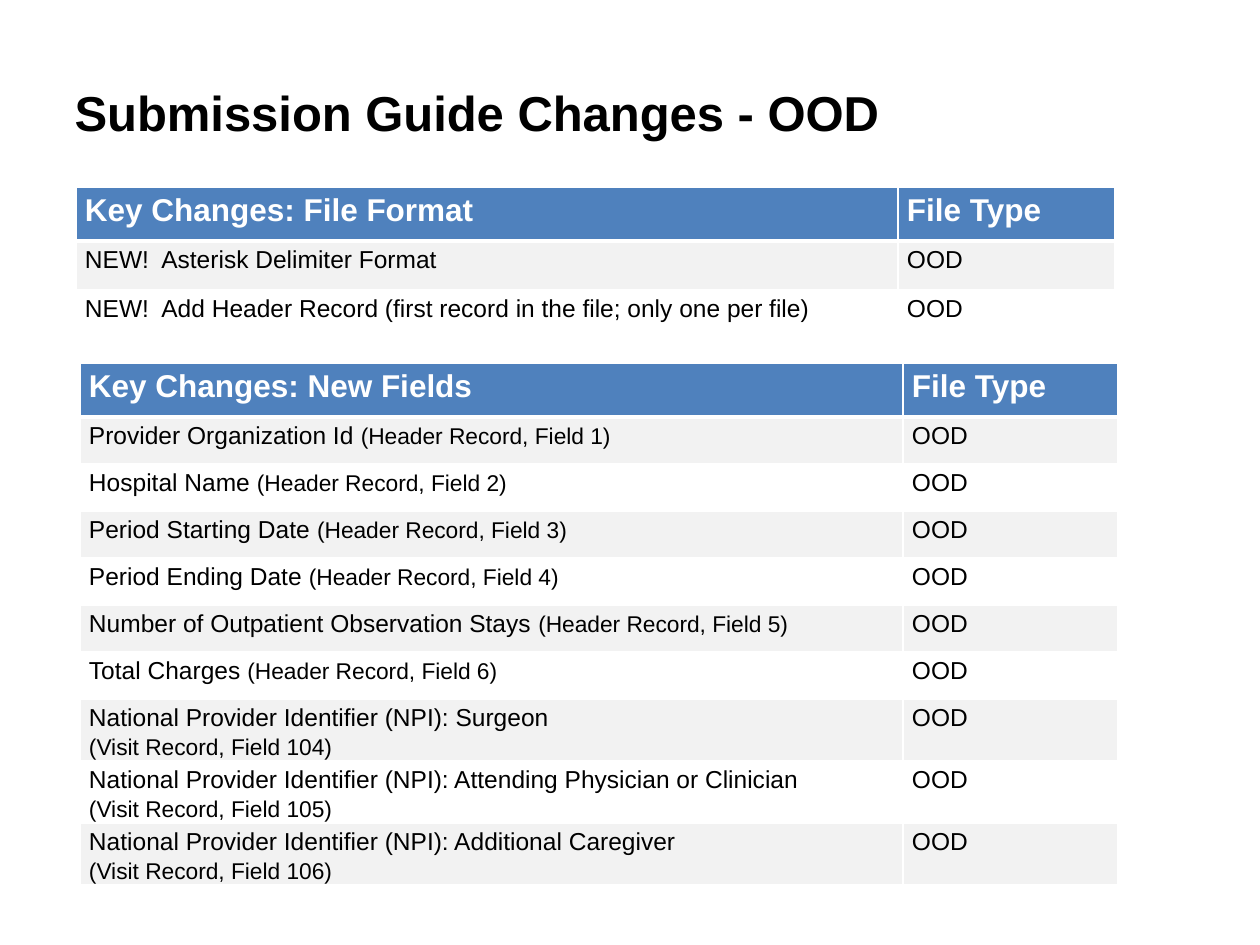
from lxml.etree import SubElement
from pptx import Presentation
from pptx.dml.color import RGBColor
from pptx.enum.text import MSO_ANCHOR, PP_ALIGN
from pptx.oxml.ns import qn
from pptx.util import Pt

EMU_PER_PX = 914400 / 126
FONT = "Arial"
BLACK, WHITE, BLUE, GRAY = "000000", "FFFFFF", "4F81BD", "F2F2F2"

TITLE = "Submission Guide Changes - OOD"
FILE_TYPE = "OOD"
HEADER_HEIGHT = 54
TWO_LINE_HEIGHT = 62

# Each change is (name, location); a name ending in a newline puts the location below it.
TABLES = [
    dict(heading="Key Changes: File Format", left=76, top=187,
         columns=(822, 217), row_height=49, changes=[
             ("NEW!  Asterisk Delimiter Format", ""),
             ("NEW!  Add Header Record (first record in the file; only one per file)", ""),
         ]),
    dict(heading="Key Changes: New Fields", left=80, top=363,
         columns=(823, 215), row_height=47, changes=[
             ("Provider Organization Id ", "(Header Record, Field 1)"),
             ("Hospital Name ", "(Header Record, Field 2)"),
             ("Period Starting Date ", "(Header Record, Field 3)"),
             ("Period Ending Date ", "(Header Record, Field 4)"),
             ("Number of Outpatient Observation Stays ", "(Header Record, Field 5)"),
             ("Total Charges ", "(Header Record, Field 6)"),
             ("National Provider Identifier (NPI): Surgeon\n", "(Visit Record, Field 104)"),
             ("National Provider Identifier (NPI): Attending Physician or Clinician\n",
              "(Visit Record, Field 105)"),
             ("National Provider Identifier (NPI): Additional Caregiver\n",
              "(Visit Record, Field 106)"),
         ]),
]


def px(length):
    return round(length * EMU_PER_PX)


def color(hex_string):
    return RGBColor.from_string(hex_string)


def set_font(font, size, hex_string, bold=False):
    font.name, font.size, font.bold = FONT, Pt(size), bold
    font.color.rgb = color(hex_string)


def add_borders(cell, bottom_width):
    properties = cell._tc.get_or_add_tcPr()
    for side, width in (("L", 1), ("R", 1), ("T", 1), ("B", bottom_width)):
        line = SubElement(properties, qn(f"a:ln{side}"), w=str(Pt(width)))
        fill = SubElement(line, qn("a:solidFill"))
        SubElement(fill, qn("a:srgbClr"), val=WHITE)


def fill_cell(cell, name, location="", size=14, text_color=BLACK,
              background=WHITE, bold=False, bottom_width=1):
    add_borders(cell, bottom_width)
    cell.fill.solid()
    cell.fill.fore_color.rgb = color(background)
    cell.margin_left = cell.margin_right = px(9)
    cell.margin_top, cell.margin_bottom = px(1), 0
    paragraph = cell.text_frame.paragraphs[0]
    paragraph.line_spacing = 1.15
    paragraph.space_after = Pt(10)
    set_font(paragraph.font, size, text_color, bold)
    set_font(paragraph.add_run().font, size, text_color, bold)
    paragraph.runs[0].text = name.rstrip("\n")
    if name.endswith("\n"):
        paragraph.add_line_break()
    if location:
        detail = paragraph.add_run()
        detail.text = location
        set_font(detail.font, 13, text_color)


def add_changes_table(slide, heading, left, top, columns, row_height, changes):
    heights = [HEADER_HEIGHT] + [
        TWO_LINE_HEIGHT if name.endswith("\n") else row_height for name, _ in changes]
    table = slide.shapes.add_table(
        len(heights), len(columns), px(left), px(top),
        px(sum(columns)), px(sum(heights))).table
    for column, width in zip(table.columns, columns):
        column.width = px(width)
    for row, height in zip(table.rows, heights):
        row.height = px(height)
    for index, label in enumerate((heading, "File Type")):
        fill_cell(table.cell(0, index), label, size=18, text_color=WHITE,
                  background=BLUE, bold=True, bottom_width=3)
    for index, (name, location) in enumerate(changes, start=1):
        background = GRAY if index % 2 else WHITE
        fill_cell(table.cell(index, 0), name, location, background=background)
        fill_cell(table.cell(index, 1), FILE_TYPE, background=background)


def main():
    presentation = Presentation()
    presentation.slide_width, presentation.slide_height = px(1260), px(945)
    slide = presentation.slides.add_slide(presentation.slide_layouts[5])

    title = slide.shapes.title
    title.left, title.top, title.width, title.height = px(62), px(51), px(1056), px(122)
    title.text_frame.text = TITLE
    title.text_frame.vertical_anchor = MSO_ANCHOR.MIDDLE
    paragraph = title.text_frame.paragraphs[0]
    paragraph.alignment = PP_ALIGN.LEFT
    set_font(paragraph.font, 28, BLACK, bold=True)

    for table in TABLES:
        add_changes_table(slide, **table)
    presentation.save("out.pptx")


if __name__ == "__main__":
    main()
